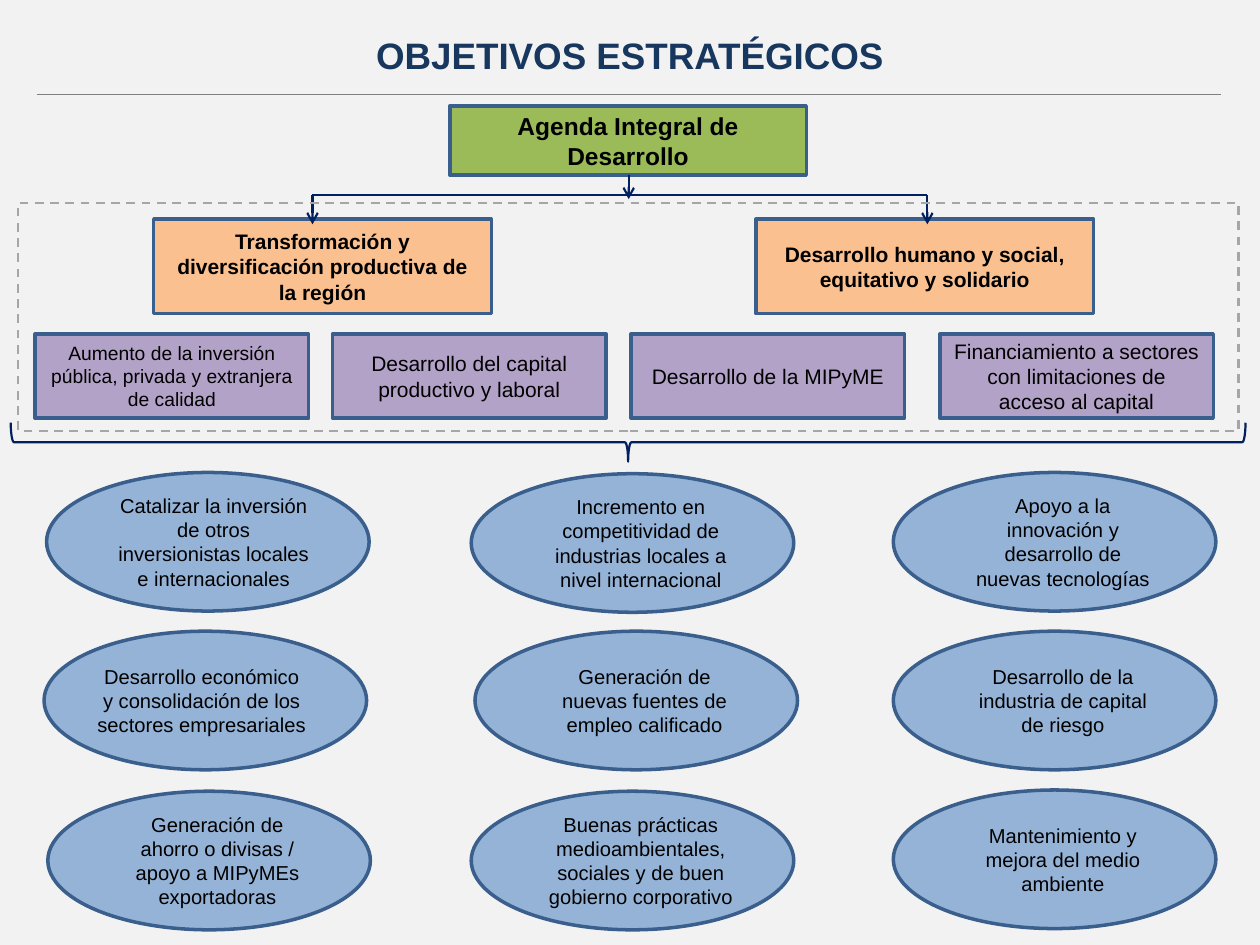
import pptx
import pptx.util
import pptx.dml.color
import pptx.enum.dml
import pptx.enum.shapes
import pptx.enum.text
import pptx.oxml.ns
from lxml import etree

Inches = pptx.util.Inches
Pt = pptx.util.Pt
RGBColor = pptx.dml.color.RGBColor
SHAPE = pptx.enum.shapes.MSO_SHAPE
MIDDLE = pptx.enum.text.MSO_ANCHOR.MIDDLE
CENTER = pptx.enum.text.PP_ALIGN.CENTER
qn = pptx.oxml.ns.qn

PAPER = RGBColor(0xF2, 0xF2, 0xF2)
TITLE_BLUE = RGBColor(0x17, 0x37, 0x5E)
OUTLINE = RGBColor(0x3A, 0x5F, 0x8C)
NAVY = RGBColor(0x00, 0x20, 0x60)
BLUE = RGBColor(0x95, 0xB3, 0xD7)
ORANGE = RGBColor(0xFA, 0xC0, 0x90)
PURPLE = RGBColor(0xB3, 0xA2, 0xC7)
GREEN = RGBColor(0x9B, 0xBB, 0x59)
RULE_GRAY = RGBColor(0x80, 0x80, 0x80)
FRAME_GRAY = RGBColor(0xA6, 0xA6, 0xA6)
BLACK = RGBColor(0, 0, 0)

deck = pptx.Presentation()
deck.slide_width, deck.slide_height = Inches(10), Inches(7.5)
page = deck.slides.add_slide(deck.slide_layouts[5])
page.background.fill.solid()
page.background.fill.fore_color.rgb = PAPER


def add_box(kind, left, top, width, height, fill=None, line=OUTLINE, weight=2,
            text="", size=12, bold=False):
    """Add a preset shape with centred text; no fill colour leaves it hollow."""
    box = page.shapes.add_shape(kind, Inches(left), Inches(top), Inches(width), Inches(height))
    box.shadow.inherit = False
    if fill is None:
        box.fill.background()
    else:
        box.fill.solid()
        box.fill.fore_color.rgb = fill
    box.line.color.rgb = line
    box.line.width = Pt(weight)
    if text:
        box.text_frame.text = text
        box.text_frame.word_wrap = True
        box.text_frame.vertical_anchor = MIDDLE
        para = box.text_frame.paragraphs[0]
        para.alignment = CENTER
        para.font.name = "Arial"
        para.font.size = Pt(size)
        para.font.bold = bold
        para.font.color.rgb = BLACK
    return box


def add_line(x1, y1, x2, y2, color=NAVY, weight=1.25, arrow=False):
    line = page.shapes.add_connector(pptx.enum.shapes.MSO_CONNECTOR.STRAIGHT,
                                     Inches(x1), Inches(y1), Inches(x2), Inches(y2))
    line.line.color.rgb = color
    line.line.width = Pt(weight)
    if arrow:
        etree.SubElement(line.line._get_or_add_ln(), qn("a:tailEnd"), type="arrow")
    etree.SubElement(line._element.spPr, qn("a:effectLst"))


# Title and rule
title = page.shapes.title
title.left, title.top, title.width, title.height = Inches(0), Inches(0.21), Inches(10), Inches(0.45)
title.text_frame.text = "OBJETIVOS ESTRATÉGICOS"
title.text_frame.auto_size = pptx.enum.text.MSO_AUTO_SIZE.NONE
title.text_frame.vertical_anchor = MIDDLE
heading = title.text_frame.paragraphs[0]
heading.alignment = CENTER
heading.font.name = "Arial"
heading.font.size = Pt(21)
heading.font.bold = True
heading.font.color.rgb = TITLE_BLUE
add_line(0.29, 0.75, 9.69, 0.75, RULE_GRAY, 0.75)

# Expected results: three rows of ellipses, with each one's left and top
results = [
    (0.37, 3.75, "Catalizar la inversión de otros inversionistas locales e internacionales"),
    (3.74, 3.76, "Incremento en competitividad de industrias locales a nivel internacional"),
    (7.09, 3.75, "Apoyo a la innovación y desarrollo de nuevas tecnologías"),
    (0.35, 5.01, "Desarrollo económico y consolidación de los sectores empresariales"),
    (3.77, 5.01, "Generación de nuevas fuentes de empleo calificado"),
    (7.09, 5.01, "Desarrollo de la industria de capital de riesgo"),
    (0.38, 6.28, "Generación de ahorro o divisas / apoyo a MIPyMEs exportadoras"),
    (3.74, 6.28, "Buenas prácticas medioambientales, sociales y de buen gobierno corporativo"),
    (7.09, 6.27, "Mantenimiento y mejora del medio ambiente"),
]
for left, top, text in results:
    ellipse = add_box(SHAPE.OVAL, left, top, 2.56, 1.1, BLUE, text=text, size=11.5)
    ellipse.text_frame.margin_left = Inches(0 if text.startswith("Catalizar") else 0.04)
    if not text.startswith("Desarrollo económico"):
        properties = ellipse.text_frame.paragraphs[0]._p.get_or_add_pPr()
        properties.set("marL", str(Inches(0.19)))

# Agenda, its two goals and four lines of action
add_box(SHAPE.RECTANGLE, 3.57, 0.84, 2.83, 0.55, GREEN,
        text="Agenda Integral de Desarrollo", size=14, bold=True)
goals = [
    (1.22, "Transformación y diversificación productiva de la región"),
    (6, "Desarrollo humano y social, equitativo y solidario"),
]
for left, text in goals:
    add_box(SHAPE.RECTANGLE, left, 1.74, 2.68, 0.75, ORANGE, text=text, bold=True)
actions = [
    (0.28, 11, "Aumento de la inversión pública, privada y extranjera de calidad"),
    (2.64, 12, "Desarrollo del capital productivo y laboral"),
    (5.01, 12, "Desarrollo de la MIPyME"),
    (7.46, 12, "Financiamiento a sectores con limitaciones de acceso al capital"),
]
for left, size, text in actions:
    add_box(SHAPE.RECTANGLE, left, 2.65, 2.17, 0.67, PURPLE, text=text, size=size)

# Branches from the agenda to the goals
add_line(4.99, 1.39, 4.99, 1.58, arrow=True)
for branch_x in (2.48, 7.36):
    add_line(4.92, 1.55, branch_x, 1.55)
    add_line(branch_x, 1.55, branch_x, 1.78, arrow=True)

# Dashed frame and the brace that points down to the results
frame = add_box(SHAPE.RECTANGLE, 0.14, 1.61, 9.69, 1.81, line=FRAME_GRAY, weight=1.25)
frame.line.dash_style = pptx.enum.dml.MSO_LINE.DASH
brace = add_box(SHAPE.RIGHT_BRACE, 4.83, -1.39, 0.31, 9.8, line=NAVY, weight=1.25)
brace.rotation = 90

deck.save("out.pptx")
